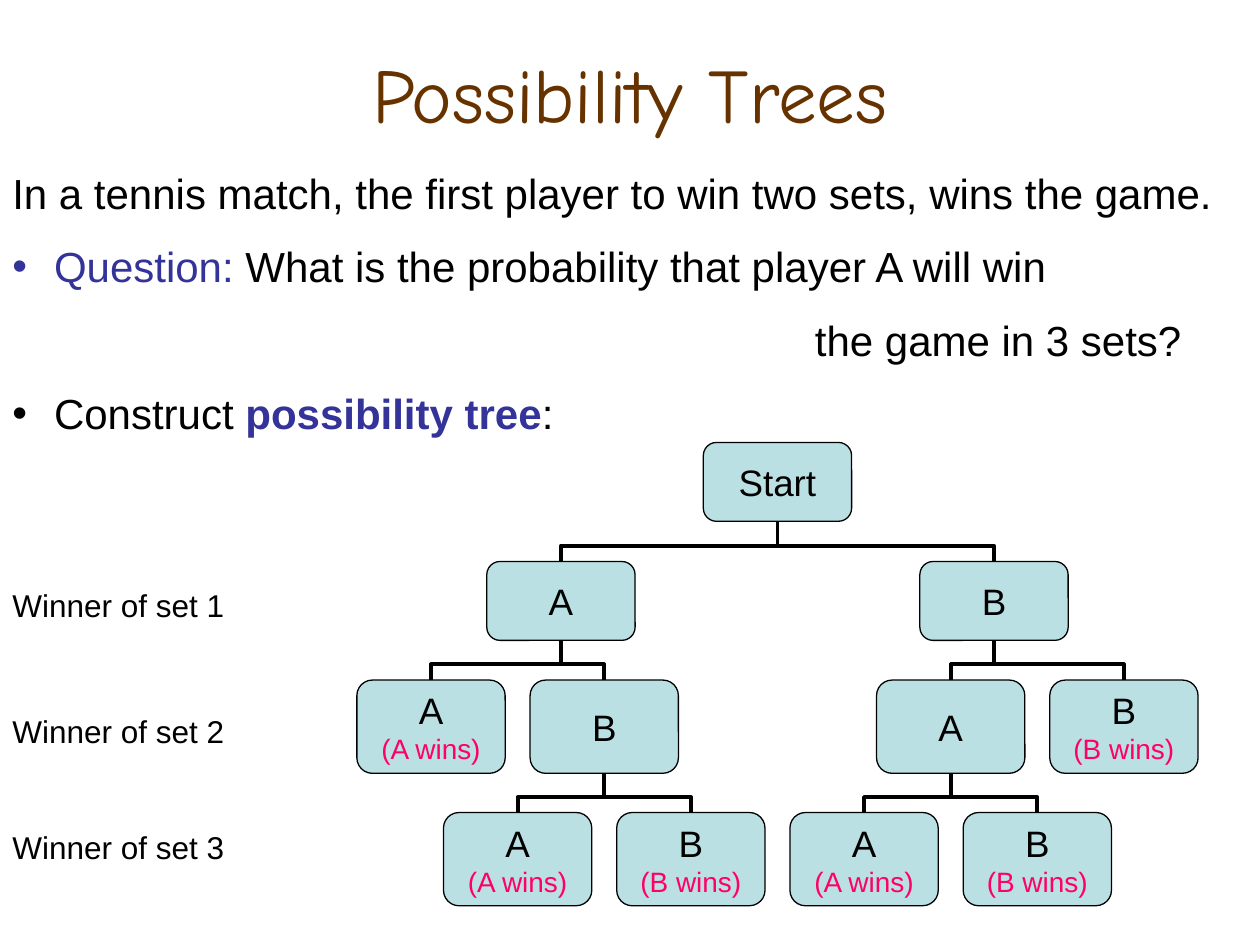
from lxml.etree import SubElement
from pptx import Presentation
from pptx.dml.color import RGBColor
from pptx.enum.shapes import MSO_CONNECTOR, MSO_SHAPE
from pptx.enum.text import MSO_ANCHOR, PP_ALIGN
from pptx.oxml.ns import qn
from pptx.util import Cm, Pt

BLACK, BROWN, BLUE, PINK, TEAL = "000000", "663300", "333399", "FF0066", "BBE0E3"

TITLE = "Possibility Trees"
BODY = [
    {"runs": [("In a tennis match, the first player to win two sets, wins the game.", BLACK, False)]},
    {"runs": [("Question:", BLUE, False),
              (" What is the probability that player A will win", BLACK, False)],
     "margin": 0.84, "bullet": True},
    {"runs": [("the game in 3 sets?", BLACK, False)], "margin": 16.18},
    {"runs": [("Construct ", BLACK, False), ("possibility tree", BLUE, True), (":", BLACK, False)],
     "margin": 0.84, "bullet": True},
]
SET_LABELS = [("Winner of set 1", 11.68), ("Winner of set 2", 14.22), ("Winner of set 3", 16.56)]

ROWS = [(8.92, 1.59), (11.32, 1.59), (13.71, 1.88), (16.38, 1.88)]
TREE = ("Start", "", 4, [
    ("A", "", 1.5, [
        ("A", "(A wins)", 0, []),
        ("B", "", 2, [("A", "(A wins)", 1, []), ("B", "(B wins)", 3, [])])]),
    ("B", "", 6.5, [
        ("A", "", 6, [("A", "(A wins)", 5, []), ("B", "(B wins)", 7, [])]),
        ("B", "(B wins)", 8, [])]),
])
FIRST_CENTER, SLOT, NODE_WIDTH = 8.69, 1.746, 2.99

NODE_FRAME = {"word_wrap": False, "vertical_anchor": MSO_ANCHOR.MIDDLE,
              "margin_left": Cm(0.1), "margin_right": Cm(0.1),
              "margin_top": Cm(0.05), "margin_bottom": Cm(0.05)}


def color(hex_value):
    return RGBColor.from_string(hex_value)


def apply(target, values):
    for name, value in values.items():
        setattr(target, name, value)


def add_run(paragraph, text, size, hex_value=BLACK, bold=False, font="Arial"):
    run = paragraph.add_run()
    run.text = text
    apply(run.font, {"size": Pt(size), "name": font, "bold": bold})
    run.font.color.rgb = color(hex_value)


def add_frame(slide, left, top, width, height, **values):
    frame = slide.shapes.add_textbox(Cm(left), Cm(top), Cm(width), Cm(height)).text_frame
    apply(frame, {"word_wrap": True, **values})
    return frame


def indent(paragraph, margin, bullet):
    properties = paragraph._p.get_or_add_pPr()
    properties.set("marL", str(Cm(margin)))
    properties.set("indent", str(-Cm(margin) if bullet else 0))
    if bullet:
        SubElement(properties, qn("a:buFont")).set("typeface", "Arial")
        SubElement(properties, qn("a:buChar")).set("char", "•")


def add_body(slide):
    frame = add_frame(slide, 0, 3.25, 24.77, 5.7)
    for index, item in enumerate(BODY):
        paragraph = frame.add_paragraph() if index else frame.paragraphs[0]
        paragraph.space_before = Pt(13.2 if index else 0)
        indent(paragraph, item.get("margin", 0), item.get("bullet", False))
        for text, hex_value, bold in item["runs"]:
            add_run(paragraph, text, 24, hex_value, bold)


def center_of(slot):
    return FIRST_CENTER + slot * SLOT


def add_branch(slide, parent_slot, child_slot, level):
    parent_top, parent_height = ROWS[level - 1]
    parent_bottom, child_top = parent_top + parent_height, ROWS[level][0]
    drop = child_top - parent_bottom
    span = abs(parent_slot - child_slot) * SLOT
    middle_x = (center_of(parent_slot) + center_of(child_slot)) / 2
    middle_y = (parent_bottom + child_top) / 2
    to_left = child_slot > parent_slot
    reach = -drop / 2 if to_left else drop / 2
    branch = slide.shapes.add_connector(
        MSO_CONNECTOR.ELBOW, Cm(middle_x - reach), Cm(middle_y - span / 2),
        Cm(middle_x + reach), Cm(middle_y + span / 2))
    branch.line.width = Pt(2.25)
    branch.line.color.rgb = color(BLACK)
    properties = branch._element.spPr
    properties.find(qn("a:xfrm")).set("rot", str((90 if to_left else 270) * 60000))
    guide = SubElement(properties.find(qn("a:prstGeom")).find(qn("a:avLst")), qn("a:gd"))
    guide.set("name", "adj1")
    guide.set("fmla", "val 39600")
    SubElement(properties, qn("a:effectLst"))


def add_branches(slide, node, level=0):
    for child in node[3]:
        add_branch(slide, node[2], child[2], level + 1)
        add_branches(slide, child, level + 1)


def add_nodes(slide, node, level=0):
    winner, verdict, slot, children = node
    top, height = ROWS[level]
    box = slide.shapes.add_shape(
        MSO_SHAPE.ROUNDED_RECTANGLE, Cm(center_of(slot) - NODE_WIDTH / 2), Cm(top),
        Cm(NODE_WIDTH), Cm(height))
    box.shadow.inherit = False
    box.fill.solid()
    box.fill.fore_color.rgb = color(TEAL)
    box.line.color.rgb = color(BLACK)
    box.line.width = Pt(0.75)
    frame = box.text_frame
    apply(frame, NODE_FRAME)
    frame.paragraphs[0].alignment = PP_ALIGN.CENTER
    add_run(frame.paragraphs[0], winner, 21)
    if verdict:
        paragraph = frame.add_paragraph()
        paragraph.alignment = PP_ALIGN.CENTER
        add_run(paragraph, verdict, 16, PINK)
    for child in children:
        add_nodes(slide, child, level + 1)


def main():
    presentation = Presentation()
    apply(presentation, {"slide_width": Cm(25.4), "slide_height": Cm(19.05)})
    slide = presentation.slides.add_slide(presentation.slide_layouts[6])

    title = add_frame(slide, 1.27, 0.76, 22.86, 2.21, vertical_anchor=MSO_ANCHOR.MIDDLE)
    title.paragraphs[0].alignment = PP_ALIGN.CENTER
    add_run(title.paragraphs[0], TITLE, 44, BROWN, font="Comic Neue")

    add_branches(slide, TREE)
    add_nodes(slide, TREE)
    for label, top in SET_LABELS:
        add_run(add_frame(slide, 0, top, 6.6, 1.02).paragraphs[0], label, 18)
    add_body(slide)
    presentation.save("out.pptx")


if __name__ == "__main__":
    main()
